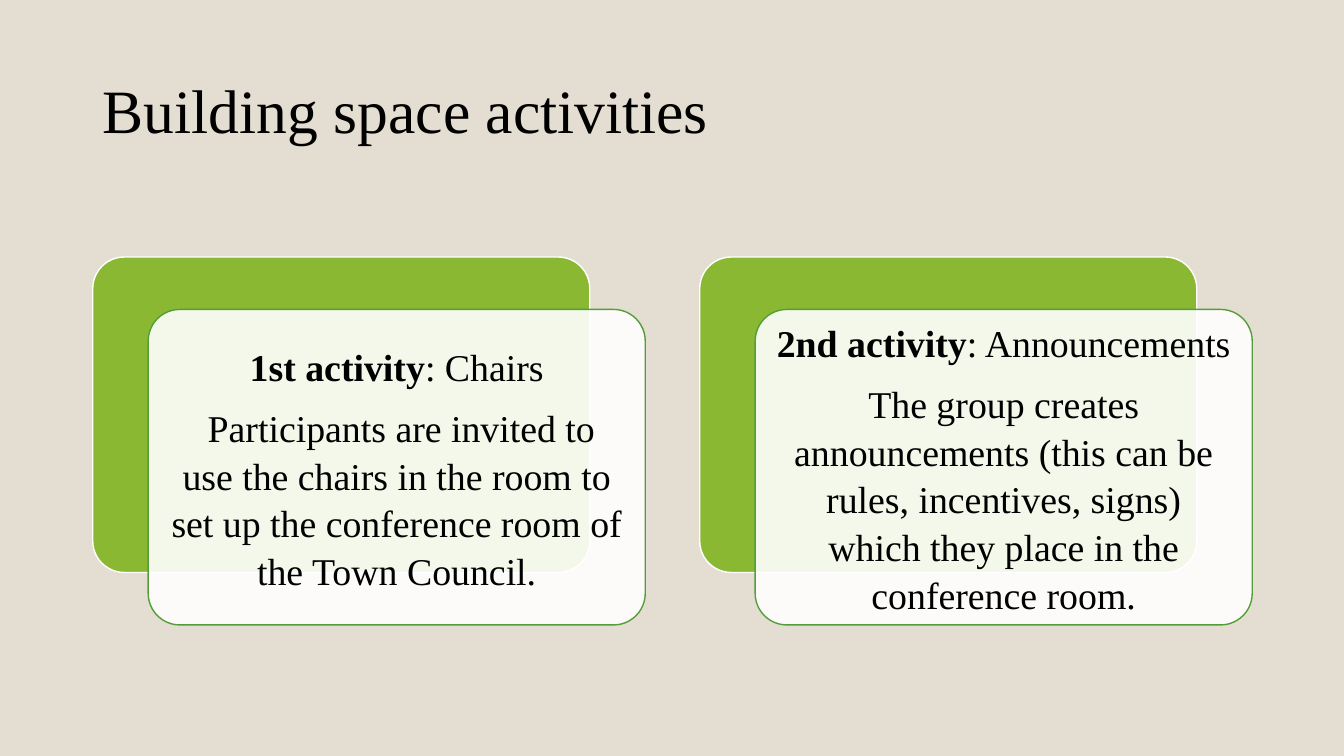
from lxml.etree import SubElement
from pptx import Presentation
from pptx.dml.color import RGBColor
from pptx.enum.shapes import MSO_SHAPE
from pptx.enum.text import MSO_ANCHOR, PP_ALIGN
from pptx.oxml.ns import qn
from pptx.util import Inches, Pt

COLORS = {
    "background": "E3DED1",
    "backing": "8AB833",
    "card": "FFFFFF",
    "card_edge": "549E39",
    "text": "000000",
}
ACTIVITIES = [
    (
        "1st activity",
        ": Chairs",
        " Participants are invited to use the chairs in the room to set up "
        "the conference room of the Town Council.",
    ),
    (
        "2nd activity",
        ": Announcements",
        "The group creates announcements (this can be rules, incentives, signs) "
        "which they place in the conference room.",
    ),
]


class ActivitySlide:
    font = "Times New Roman"
    card_width, card_height = 4.93, 3.13

    def __init__(self, presentation):
        self.slide = presentation.slides.add_slide(presentation.slide_layouts[5])
        background = self.slide.background.fill
        background.solid()
        background.fore_color.rgb = self.color("background")

    def color(self, name):
        return RGBColor.from_string(COLORS[name])

    def run(self, paragraph, text, size, bold=False):
        run = paragraph.add_run()
        run.text = text
        run.font.name = self.font
        run.font.size = Pt(size)
        run.font.bold = bold
        run.font.color.rgb = self.color("text")

    def title(self, text):
        heading = self.slide.shapes.title
        heading.left, heading.top = Inches(0.92), Inches(0.4)
        heading.width, heading.height = Inches(11.5), Inches(1.45)
        frame = heading.text_frame
        frame.word_wrap = True
        frame.vertical_anchor = MSO_ANCHOR.MIDDLE
        paragraph = frame.paragraphs[0]
        paragraph.alignment = PP_ALIGN.LEFT
        paragraph.line_spacing = 0.9
        self.run(paragraph, text, 44)

    def panel(self, left, top, fill, edge, opacity=100):
        panel = self.slide.shapes.add_shape(
            MSO_SHAPE.ROUNDED_RECTANGLE,
            Inches(left), Inches(top),
            Inches(self.card_width), Inches(self.card_height),
        )
        panel.adjustments[0] = 0.1
        panel.shadow.inherit = False
        panel.fill.solid()
        panel.fill.fore_color.rgb = self.color(fill)
        panel.line.color.rgb = self.color(edge)
        panel.line.width = Pt(1)
        if opacity < 100:
            tint = panel.fill._xPr.find(qn("a:solidFill"))[0]
            SubElement(tint, qn("a:alpha")).set("val", str(opacity * 1000))
        return panel

    def activity(self, left, top, label, name, description):
        self.panel(left, top, "backing", "card")
        card = self.panel(left + 0.55, top + 0.52, "card", "card_edge", 90)
        frame = card.text_frame
        frame.word_wrap = True
        frame.vertical_anchor = MSO_ANCHOR.MIDDLE
        frame.margin_left = frame.margin_right = Inches(0.11)
        frame.margin_top = frame.margin_bottom = Inches(0.11)
        heading, body = frame.paragraphs[0], frame.add_paragraph()
        for paragraph in (heading, body):
            paragraph.alignment = PP_ALIGN.CENTER
            paragraph.line_spacing = 1.05
            paragraph.space_after = Pt(9.5)
        self.run(heading, label, 27, bold=True)
        self.run(heading, name, 27)
        self.run(body, description, 27)


def main():
    presentation = Presentation()
    presentation.slide_width = Inches(13.33)
    presentation.slide_height = Inches(7.5)
    page = ActivitySlide(presentation)
    page.title("Building space activities")
    for index, (label, name, description) in enumerate(ACTIVITIES):
        page.activity(0.92 + index * 6.02, 2.55, label, name, description)
    presentation.save("out.pptx")


if __name__ == "__main__":
    main()
